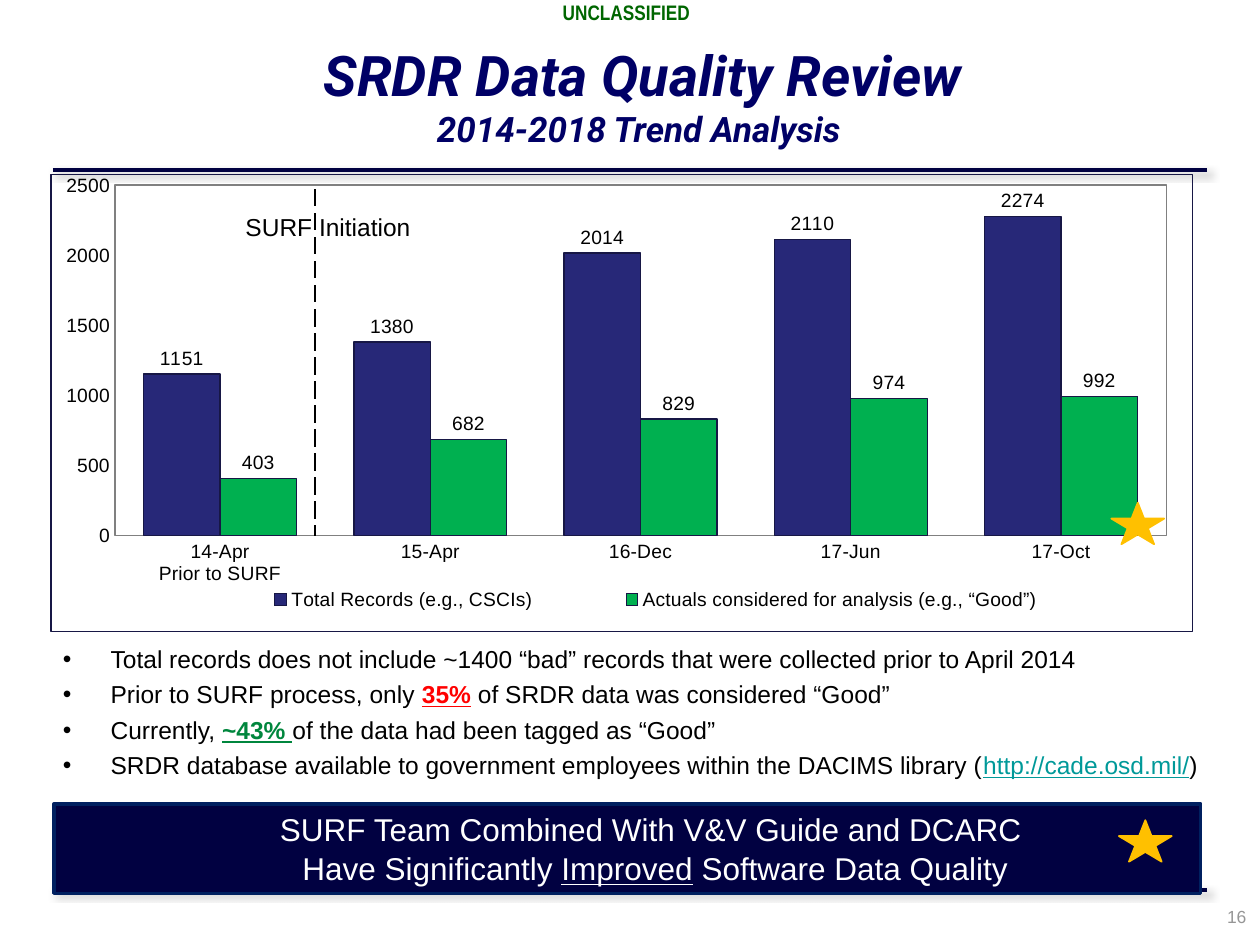
from dataclasses import dataclass

from lxml.etree import SubElement
from pptx import Presentation
from pptx.chart.data import CategoryChartData
from pptx.dml.color import RGBColor
from pptx.enum.chart import XL_CHART_TYPE, XL_LABEL_POSITION, XL_LEGEND_POSITION, XL_TICK_MARK
from pptx.enum.dml import MSO_LINE
from pptx.enum.shapes import MSO_CONNECTOR, MSO_SHAPE
from pptx.enum.text import MSO_ANCHOR, PP_ALIGN
from pptx.oxml import parse_xml
from pptx.oxml.ns import nsdecls, qn
from pptx.util import Inches, Pt

COLORS = {
    "navy": "010141", "title": "000066", "edge": "002060", "border": "171745",
    "bar": "272878", "green": "00B050", "good": "00863D", "mark": "006600",
    "red": "FF0000", "link": "009999", "star": "FFC000", "black": "000000",
    "white": "FFFFFF", "gray": "808080", "number": "969696",
}
COLUMNS, ROWS = 100, 75
SLIDE_WIDTH, SLIDE_HEIGHT = Inches(10), Inches(7.5)


@dataclass
class Box:
    left: float
    top: float
    width: float
    height: float

    def inner(self, left, top, width, height):
        return Box(self.left + left, self.top + top, width, height)

    def place(self):
        across, down = SLIDE_WIDTH / COLUMNS, SLIDE_HEIGHT / ROWS
        return (round(self.left * across), round(self.top * down),
                round(self.width * across), round(self.height * down))


def rgb(name):
    return RGBColor.from_string(COLORS[name])


def write_text(shape, paragraphs, size=14, font="Arial", color="black", bold=False,
               italic=False, align=PP_ALIGN.LEFT, anchor=MSO_ANCHOR.TOP, margins=(0.1, 0.05),
               indent=0, bullet=False, gap=0, wrap=True):
    frame = shape.text_frame
    frame.word_wrap = wrap
    frame.vertical_anchor = anchor
    frame.margin_left = frame.margin_right = Inches(margins[0])
    frame.margin_top = frame.margin_bottom = Inches(margins[1])
    for index, spans in enumerate(paragraphs):
        para = frame.paragraphs[0] if index == 0 else frame.add_paragraph()
        para.alignment = align
        if index and gap:
            para.space_before = Pt(gap)
        if indent:
            properties = para._p.get_or_add_pPr()
            properties.set("marL", str(Inches(indent)))
            properties.set("indent", str(-Inches(indent) if bullet else 0))
            if bullet:
                SubElement(properties, qn("a:buFont"), typeface="Arial")
                SubElement(properties, qn("a:buChar"), char="•")
        for words, style in spans:
            span = para.add_run()
            span.text = words
            face = span.font
            face.name, face.italic = font, italic
            face.size = Pt(style.get("size", size))
            face.bold = style.get("bold", bold)
            face.underline = style.get("underline", False)
            face.color.rgb = rgb(style.get("color", color))


def add_text(page, box, paragraphs, **style):
    write_text(page.shapes.add_textbox(*box.place()), paragraphs, **style)


def add_line(page, box, color, width, dash=None, shadow=False):
    left, top, across, down = box.place()
    line = page.shapes.add_connector(MSO_CONNECTOR.STRAIGHT, left, top, left + across, top + down)
    line.line.color.rgb = rgb(color)
    line.line.width = Pt(width)
    if dash:
        line.line.dash_style = dash
    effects = SubElement(line.element.spPr, qn("a:effectLst"))
    if shadow:
        cast = SubElement(effects, qn("a:outerShdw"), blurRad=str(Pt(4)), dist=str(Pt(3)),
                          dir="2700000", algn="tl", rotWithShape="0")
        tint = SubElement(cast, qn("a:srgbClr"), val=COLORS["black"])
        SubElement(tint, qn("a:alpha"), val="40000")


def add_shape(page, box, kind, fill, edge, width):
    shape = page.shapes.add_shape(kind, *box.place())
    shape.shadow.inherit = False
    shape.fill.solid()
    shape.fill.fore_color.rgb = rgb(fill)
    shape.line.color.rgb = rgb(edge)
    shape.line.width = Pt(width)
    return shape


def add_star(page, box):
    add_shape(page, box, MSO_SHAPE.STAR_5_POINT, "star", "star", 1)


def build_frame(page, box):
    for row in (70.6, 13.5):
        add_line(page, box.inner(4.2, row, 91.6, 0), "navy", 2.25, shadow=True)
    add_text(page, box.inner(44.6, 0, 10.6, 2), [[("UNCLASSIFIED ", {})]], size=12,
             font="Arial Narrow", color="mark", bold=True, align=PP_ALIGN.CENTER,
             margins=(0, 0), wrap=False)
    add_text(page, box.inner(87.4, 71.4, 12.5, 3.3), [[("16", {})]], size=10,
             color="number", align=PP_ALIGN.RIGHT)


def build_title(page, box):
    title = page.shapes.title
    title.left, title.top, title.width, title.height = box.place()
    write_text(title, [[("SRDR Data Quality Review", {})],
                       [("2014-2018 Trend Analysis ", {"size": 20})]],
               size=32, font="Roboto", color="title", bold=True, italic=True,
               align=PP_ALIGN.CENTER, anchor=MSO_ANCHOR.MIDDLE, margins=(0.07, 0.03))


def chart_layout(x, y, w, h, target=""):
    modes = '<c:xMode val="edge"/><c:yMode val="edge"/>'
    sizes = "".join(f'<c:{key} val="{value}"/>' for key, value in zip("xywh", (x, y, w, h)))
    return parse_xml(f'<c:layout {nsdecls("c")}><c:manualLayout>{target}{modes}{sizes}'
                     '</c:manualLayout></c:layout>')


def chart_outline(color):
    return parse_xml(f'<c:spPr {nsdecls("c", "a")}><a:noFill/><a:ln w="{Pt(0.75)}"><a:solidFill>'
                     f'<a:srgbClr val="{COLORS[color]}"/></a:solidFill></a:ln></c:spPr>')


def build_chart(page, box):
    data = CategoryChartData(number_format="General")
    data.categories = ["14-Apr\nPrior to SURF", "15-Apr", "16-Dec", "17-Jun", "17-Oct"]
    data.add_series("Total Records (e.g., CSCIs)", (1151, 1380, 2014, 2110, 2274))
    data.add_series("Actuals considered for analysis (e.g., “Good”)", (403, 682, 829, 974, 992))
    chart = page.shapes.add_chart(XL_CHART_TYPE.COLUMN_CLUSTERED, *box.place(), data).chart
    chart.has_title = False
    chart.font.name, chart.font.size = "Arial", Pt(11)
    chart.font.color.rgb = rgb("black")
    chart.has_legend = True
    chart.legend.position = XL_LEGEND_POSITION.BOTTOM
    chart.legend.include_in_layout = False

    for axis in (chart.category_axis, chart.value_axis):
        axis.major_tick_mark = axis.minor_tick_mark = XL_TICK_MARK.NONE
        axis.has_major_gridlines = False
        axis.format.line.color.rgb = rgb("gray")
    chart.value_axis.minimum_scale, chart.value_axis.maximum_scale = 0, 2500
    chart.value_axis.major_unit = 500

    plot = chart.plots[0]
    plot.gap_width, plot.overlap, plot.vary_by_categories = 75, 0, False
    for series, color in zip(plot.series, ("bar", "green")):
        series.format.fill.solid()
        series.format.fill.fore_color.rgb = rgb(color)
        series.format.line.color.rgb = rgb("border")
        series.format.line.width = Pt(0.75)
        series.data_labels.show_value = True
        series.data_labels.position = XL_LABEL_POSITION.OUTSIDE_END

    root = chart.element.find(qn("c:chart"))
    root.addnext(chart_outline("border"))
    area = root.find(qn("c:plotArea"))
    for old in area.findall(qn("c:layout")):
        area.remove(old)
    area.insert(0, chart_layout(0.056, 0.023, 0.921, 0.766, '<c:layoutTarget val="inner"/>'))
    area.append(chart_outline("gray"))
    legend = root.find(qn("c:legend"))
    for old in legend.findall(qn("c:layout")):
        legend.remove(old)
    legend.find(qn("c:legendPos")).addnext(chart_layout(0.12, 0.89, 0.82, 0.08))

    add_star(page, box.inner(84.2, 26.1, 4.2, 3.3))
    add_line(page, box.inner(21, 1.2, 0, 27.5), "black", 1.25, dash=MSO_LINE.LONG_DASH)
    add_text(page, box.inner(14.5, 2.5, 15.6, 3.4), [[("SURF Initiation", {})]])


def build_findings(page, box):
    add_text(page, box, [
        [("Total records does not include ~1400 “bad” records that were collected "
          "prior to April 2014", {})],
        [("Prior to SURF process, only ", {}),
         ("35%", {"color": "red", "bold": True, "underline": True}),
         (" of SRDR data was considered “Good”", {})],
        [("Currently, ", {}), ("~43% ", {"color": "good", "bold": True, "underline": True}),
         ("of the data had been tagged as “Good”", {})],
        [("SRDR database available to government employees within the DACIMS library (", {}),
         ("http://cade.osd.mil/", {"color": "link", "underline": True}), (")", {})],
    ], margins=(0.1, 0.1), indent=0.38, bullet=True, gap=3.5)


def build_banner(page, box):
    banner = add_shape(page, box, MSO_SHAPE.RECTANGLE, "navy", "edge", 2)
    write_text(banner, [
        [("SURF Team Combined With V&V Guide and DCARC ", {})],
        [("Have Significantly ", {}), ("Improved", {"underline": True}),
         (" Software Data Quality", {})],
    ], size=18, color="white", align=PP_ALIGN.CENTER, anchor=MSO_ANCHOR.MIDDLE,
        indent=0.44, gap=1)
    add_star(page, box.inner(84.5, 1.3, 4.2, 3.3))


def main():
    deck = Presentation()
    deck.slide_width, deck.slide_height = SLIDE_WIDTH, SLIDE_HEIGHT
    page = deck.slides.add_slide(deck.slide_layouts[5])
    build_frame(page, Box(0, 0, COLUMNS, ROWS))
    build_title(page, Box(7.1, 2.5, 87.9, 10.1))
    build_findings(page, Box(4, 50.1, 92.3, 18.5))
    build_chart(page, Box(4, 13.8, 90.7, 36.4))
    build_banner(page, Box(4.3, 63.8, 91, 7.1))
    deck.save("out.pptx")


if __name__ == "__main__":
    main()
